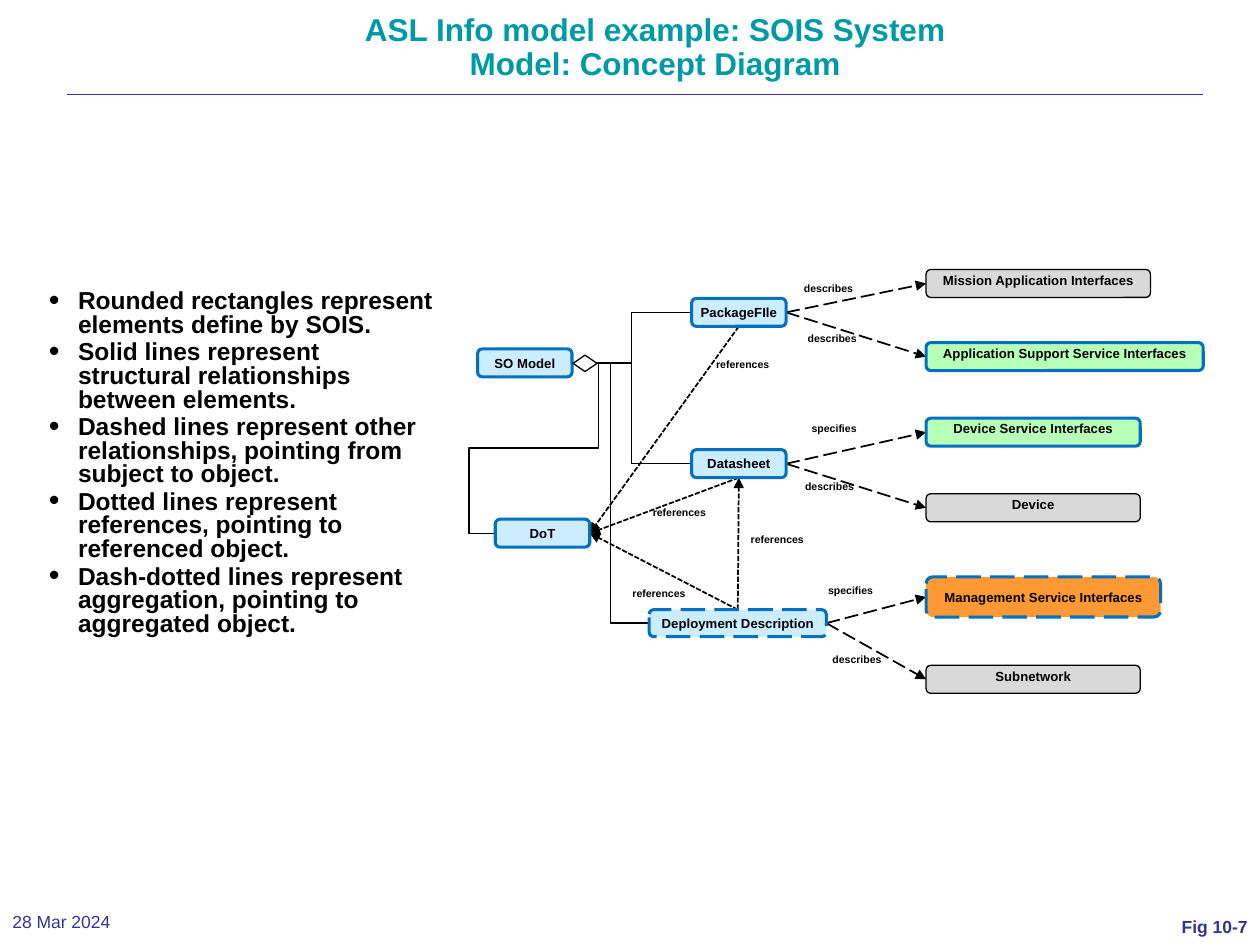
from lxml import etree
from pptx import Presentation
from pptx.dml.color import RGBColor
from pptx.enum.dml import MSO_LINE
from pptx.enum.shapes import MSO_CONNECTOR, MSO_SHAPE
from pptx.enum.text import MSO_ANCHOR, PP_ALIGN
from pptx.oxml.ns import qn
from pptx.util import Pt

FONT = "Arial"
STRAIGHT, ELBOW = MSO_CONNECTOR.STRAIGHT, MSO_CONNECTOR.ELBOW
LONG_DASH, DOTTED = MSO_LINE.LONG_DASH, MSO_LINE.SQUARE_DOT
LEFT, CENTER, RIGHT = PP_ALIGN.LEFT, PP_ALIGN.CENTER, PP_ALIGN.RIGHT
TOP, MIDDLE, BOTTOM = MSO_ANCHOR.TOP, MSO_ANCHOR.MIDDLE, MSO_ANCHOR.BOTTOM
SITES = {"top": 0, "left": 1, "bottom": 2, "right": 3}

COLORS = {
    "title": "0099A6", "footer": "333399", "black": "000000", "white": "FFFFFF",
    "border": "0070C0", "blue": "CCECFF", "green": "B8FFB8",
    "gray": "D9D9D9", "orange": "FF9933",
}

TITLE = "ASL Info model example: SOIS System Model: Concept Diagram"
BULLETS = [
    "Rounded rectangles represent elements define by SOIS.",
    "Solid lines represent structural relationships between elements.",
    "Dashed lines represent other relationships, pointing from subject to object.",
    "Dotted lines represent references, pointing to referenced object.",
    "Dash-dotted lines represent aggregation, pointing to aggregated object.",
]

# name: (left, top, width, height, fill, dashed border, anchor)
INTERFACE_LEFT, MODEL_LEFT, MODEL_WIDTH, BOX_HEIGHT = 529.2, 395.2, 54, 16
BOXES = {
    "Mission Application Interfaces": (INTERFACE_LEFT, 154, 128.2, BOX_HEIGHT, "gray", False, TOP),
    "PackageFIle": (MODEL_LEFT, 170.5, MODEL_WIDTH, BOX_HEIGHT, "blue", False, MIDDLE),
    "Application Support Service Interfaces":
        (INTERFACE_LEFT, 195.8, 158.4, BOX_HEIGHT, "green", False, TOP),
    "SO Model": (272.9, 199.4, MODEL_WIDTH, BOX_HEIGHT, "blue", False, MIDDLE),
    "DoT": (283, 296.7, MODEL_WIDTH, BOX_HEIGHT, "blue", False, MIDDLE),
    "Device Service Interfaces": (INTERFACE_LEFT, 239, 122.4, BOX_HEIGHT, "green", False, TOP),
    "Datasheet": (MODEL_LEFT, 257, MODEL_WIDTH, BOX_HEIGHT, "blue", False, MIDDLE),
    "Device": (INTERFACE_LEFT, 282.2, 122.4, BOX_HEIGHT, "gray", False, TOP),
    "Deployment Description": (371, 348.4, 101.2, 15.4, "blue", True, MIDDLE),
    "Management Service Interfaces": (INTERFACE_LEFT, 329.6, 134, 23, "orange", True, MIDDLE),
    "Subnetwork": (INTERFACE_LEFT, 380.2, 122.4, BOX_HEIGHT, "gray", False, TOP),
}

# part, side of the part that the line leaves from
STRUCTURE = [("Datasheet", "left"), ("DoT", "left"),
             ("Deployment Description", "left"), ("PackageFIle", "left")]
DOT_BENDS = [-0.343, 0.5, 1.343]
DASHED = [
    ("Datasheet", "Device Service Interfaces"),
    ("Datasheet", "Device"),
    ("Deployment Description", "Management Service Interfaces"),
    ("Deployment Description", "Subnetwork"),
    ("PackageFIle", "Application Support Service Interfaces"),
    ("PackageFIle", "Mission Application Interfaces"),
]
REFERENCES = [
    ("Datasheet", "bottom", "DoT", "right"),
    ("Deployment Description", "top", "DoT", "right"),
    ("Deployment Description", "top", "Datasheet", "bottom"),
    ("PackageFIle", "bottom", "DoT", "right"),
]
LABELS = [
    ("describes", 459.4, 161.3), ("describes", 461.5, 190), ("references", 409.2, 204.7),
    ("specifies", 463.8, 241.4), ("describes", 460, 274.2), ("references", 373, 289.3),
    ("references", 429, 304.6), ("references", 361.4, 335.3), ("specifies", 473.2, 333.6),
    ("describes", 475.7, 373.3),
]


def color(name):
    return RGBColor.from_string(COLORS[name])


def place(shape, left, top, width, height):
    shape.left, shape.top, shape.width, shape.height = map(Pt, (left, top, width, height))


def set_frame(shape, anchor=TOP, side=7.2, end=3.6, wrap=True):
    frame = shape.text_frame
    frame.word_wrap, frame.vertical_anchor = wrap, anchor
    frame.margin_left = frame.margin_right = Pt(side)
    frame.margin_top = frame.margin_bottom = Pt(end)
    return frame


def write(paragraph, text, size, color_name="black", bold=True, align=LEFT):
    paragraph.alignment = align
    run = paragraph.add_run()
    run.text = text
    run.font.name, run.font.size, run.font.bold = FONT, Pt(size), bold
    run.font.color.rgb = color(color_name)


def add_text(slide, text, box, size, **style):
    shape = slide.shapes.add_textbox(*map(Pt, box))
    frame = set_frame(shape, MIDDLE)
    write(frame.paragraphs[0], text, size, **style)


def add_bullet(paragraph, text):
    write(paragraph, text, 14)
    paragraph.line_spacing = 0.8
    paragraph.space_before = paragraph.space_after = Pt(1.2)
    properties = paragraph._p.get_or_add_pPr()
    properties.set("marL", str(Pt(16.6)))
    properties.set("indent", str(Pt(-16.6)))
    etree.SubElement(properties, qn("a:buSzPct"), val="125000")
    etree.SubElement(properties, qn("a:buFont"), typeface=FONT)
    etree.SubElement(properties, qn("a:buChar"), char="•")


def style_shape(shape, fill, line, width):
    shape.shadow.inherit = False
    shape.fill.solid()
    shape.fill.fore_color.rgb = color(fill)
    shape.line.color.rgb = color(line)
    shape.line.width = Pt(width)


def add_box(slide, name, left, top, width, height, fill, dashed, anchor):
    shape = slide.shapes.add_shape(MSO_SHAPE.ROUNDED_RECTANGLE,
                                   *map(Pt, (left, top, width, height)))
    plain = fill == "gray"
    style_shape(shape, fill, "black" if plain else "border", 0.75 if plain else 1.75)
    if dashed:
        shape.line.dash_style = LONG_DASH
    frame = set_frame(shape, anchor, 0.7, 0.7)
    write(frame.paragraphs[0], name, 7.5, align=CENTER)
    return shape


def add_line(slide, kind, ends, color_name, width):
    connector = slide.shapes.add_connector(kind, *map(Pt, ends))
    connector.line.color.rgb = color(color_name)
    connector.line.width = Pt(width)
    etree.SubElement(connector._element.spPr, qn("a:effectLst"))
    return connector


def link(slide, boxes, start, start_side, end, end_side, kind=STRAIGHT, dash=None):
    """Join two boxes, behind all boxes; a dashed link gets an arrowhead."""
    connector = add_line(slide, kind, (0, 0, 0, 0), "black", 1 if dash else 0.75)
    connector.begin_connect(boxes[start], SITES[start_side])
    connector.end_connect(boxes[end], SITES[end_side])
    if dash:
        connector.line.dash_style = dash
        etree.SubElement(connector.line._get_or_add_ln(), qn("a:tailEnd"), type="triangle")
    next(iter(boxes.values()))._element.addprevious(connector._element)
    return connector


def bend_five(connector, bends):
    """Turn an elbow into one with five segments."""
    geometry = connector._element.spPr.find(qn("a:prstGeom"))
    geometry.set("prst", "bentConnector5")
    guides = geometry.find(qn("a:avLst"))
    for number, bend in enumerate(bends, 1):
        etree.SubElement(guides, qn("a:gd"), name=f"adj{number}",
                         fmla=f"val {round(bend * 100000)}")


def main():
    presentation = Presentation()
    presentation.slide_width, presentation.slide_height = Pt(720), Pt(540)
    slide = presentation.slides.add_slide(presentation.slide_layouts[5])
    add_line(slide, STRAIGHT, (38.2, 54, 687.6, 54), "footer", 0.13)

    title = slide.shapes.title
    place(title, 180, -41, 388.8, 91.4)
    paragraph = set_frame(title, BOTTOM).paragraphs[0]
    write(paragraph, TITLE, 18, "title", align=CENTER)
    paragraph.line_spacing = 0.9

    body = slide.shapes.add_textbox(*map(Pt, (20.9, 162.7, 236.9, 281.5)))
    frame = set_frame(body)
    for index, text in enumerate(BULLETS):
        add_bullet(frame.add_paragraph() if index else frame.paragraphs[0], text)

    boxes = {name: add_box(slide, name, *box) for name, box in BOXES.items()}
    for part, side in STRUCTURE:
        connector = link(slide, boxes, part, side, "SO Model", "right", ELBOW)
        if part == "DoT":
            bend_five(connector, DOT_BENDS)
    for start, end in DASHED:
        link(slide, boxes, start, "right", end, "left", dash=LONG_DASH)
    for ends in REFERENCES:
        link(slide, boxes, *ends, dash=DOTTED)

    diamond = slide.shapes.add_shape(MSO_SHAPE.FLOWCHART_DECISION,
                                     *map(Pt, (329.6, 200.8, 9.4, 13.7)))
    diamond.rotation = 270
    style_shape(diamond, "white", "black", 0.75)

    for text, left, top in LABELS:
        label = slide.shapes.add_textbox(*map(Pt, (left, top, 34, 9.4)))
        write(set_frame(label, TOP, 0, 0, wrap=False).paragraphs[0], text, 6)

    add_text(slide, "28 Mar 2024", (0, 516.2, 136, 20.9), 10, color_name="footer", bold=False)
    add_text(slide, "Fig 10-7", (584, 519.1, 136, 20.9), 10, color_name="footer", align=RIGHT)
    presentation.save("out.pptx")


if __name__ == "__main__":
    main()
